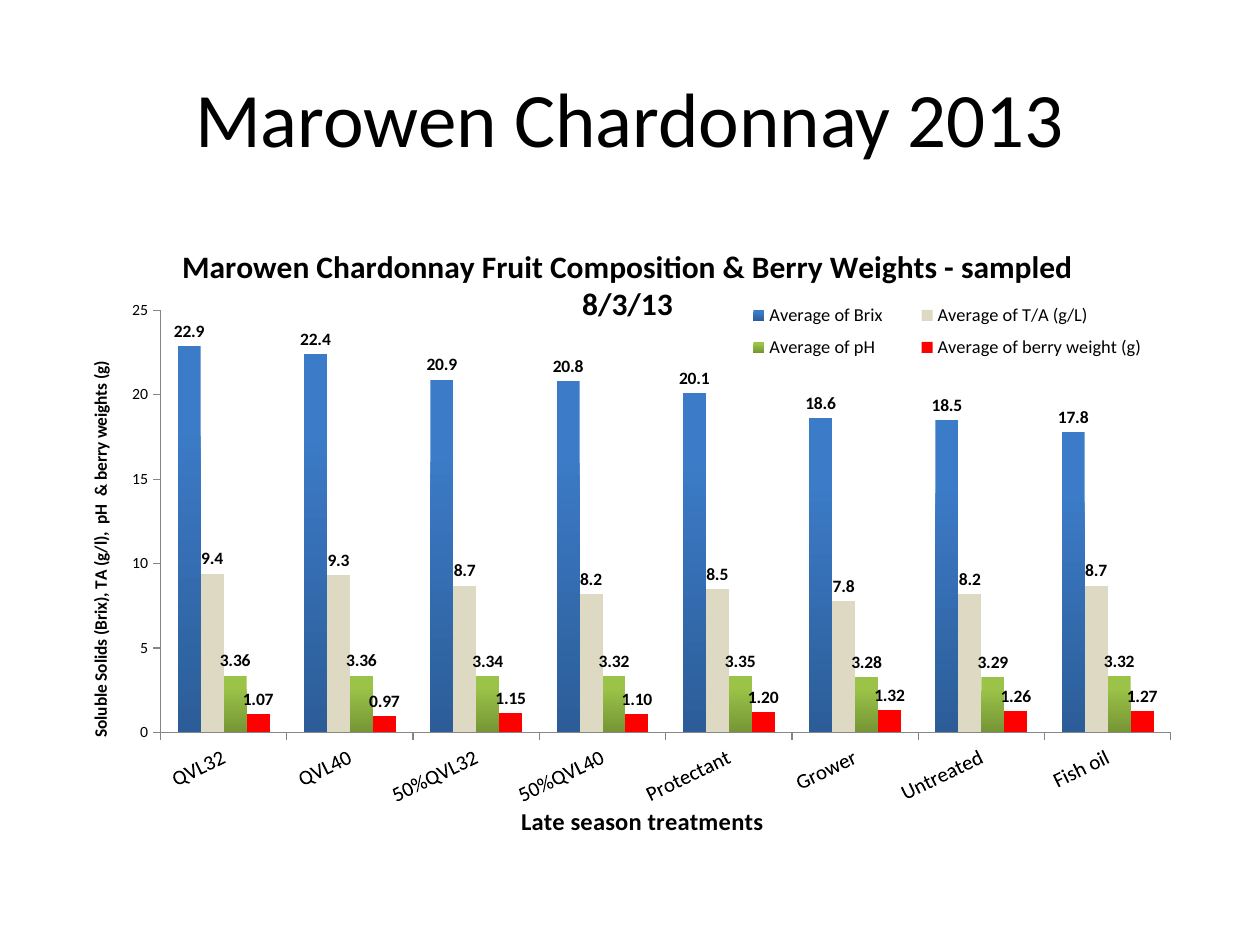
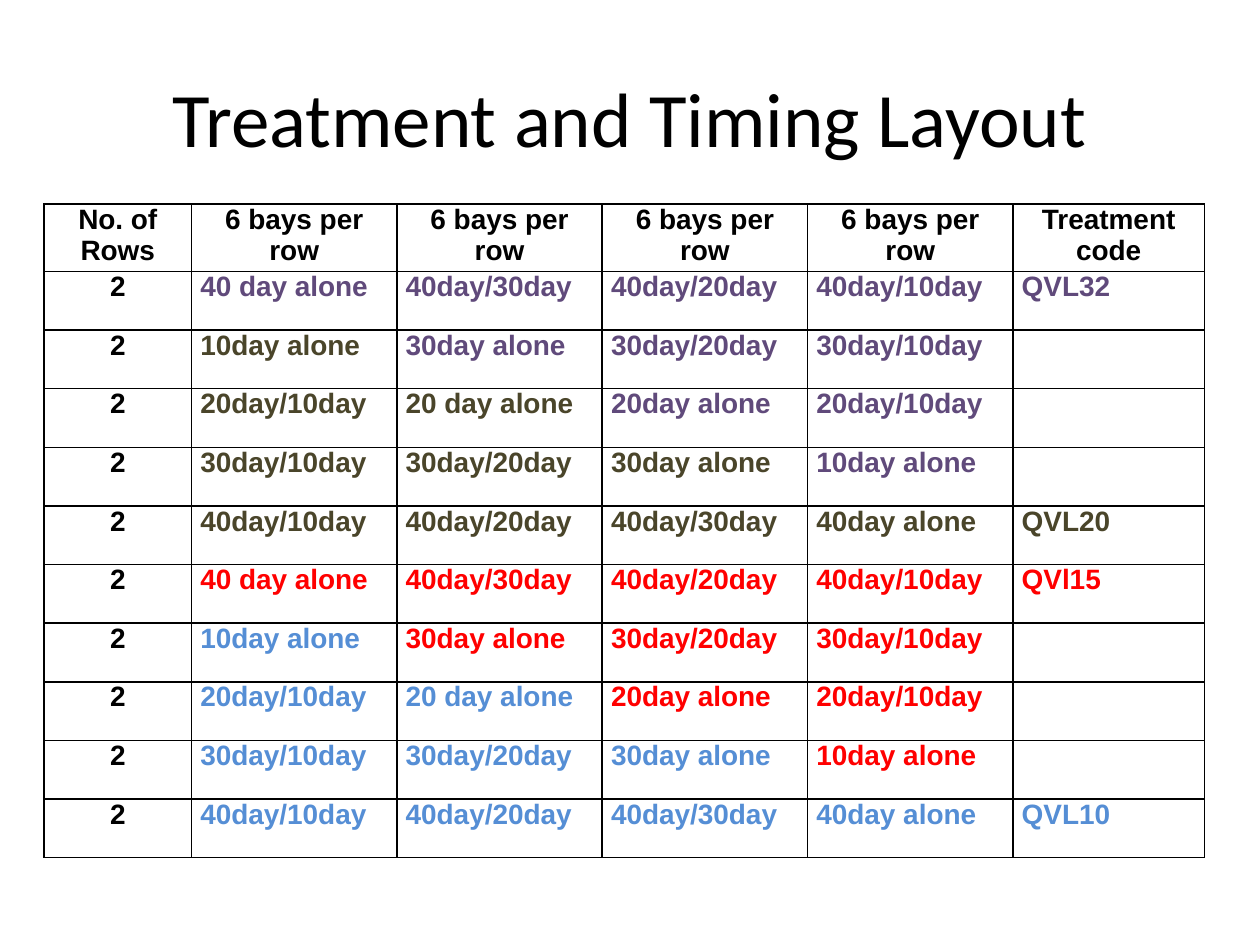
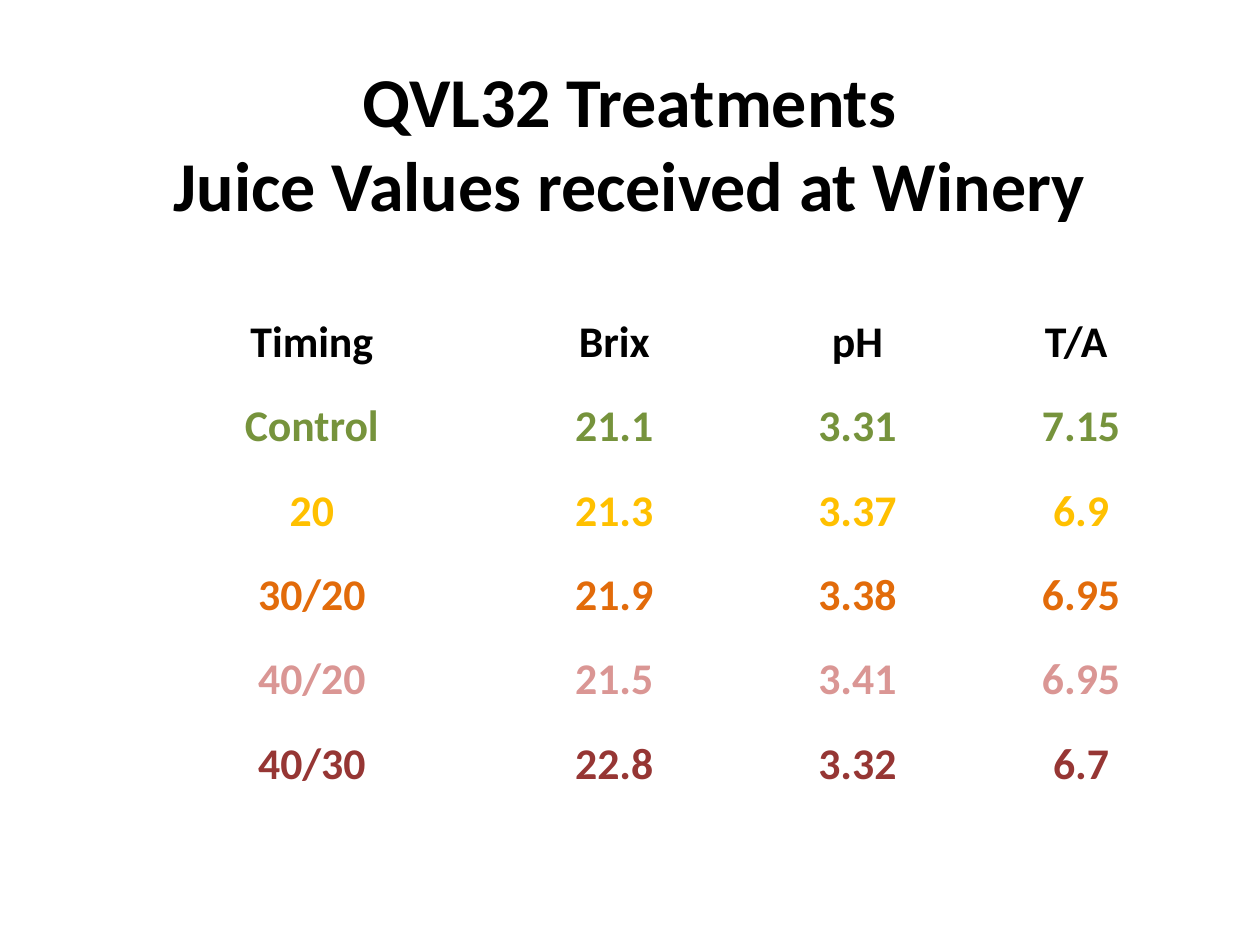
import lxml.etree
import pptx
import pptx.chart.data
import pptx.dml.color
import pptx.enum.chart
import pptx.enum.text
import pptx.oxml.ns
import pptx.util

PX = 9144  # 100 px to the inch
BLACK = "000000"
AXIS_GREY = "868686"
PURPLE, OLIVE, RED, BLUE = "604A7B", "4A452A", "FF0000", "558ED5"
CENTER = pptx.enum.text.PP_ALIGN.CENTER
LEFT = pptx.enum.text.PP_ALIGN.LEFT
qn = pptx.oxml.ns.qn

TREATMENTS = ["QVL32", "QVL40", "50%QVL32", "50%QVL40",
              "Protectant", "Grower", "Untreated", "Fish oil"]
# name, values, label format, colours from top to bottom
SERIES = [
    ("Average of Brix", [22.9, 22.4, 20.9, 20.8, 20.1, 18.6, 18.5, 17.8],
     "#,##0.0", ["3C7BC7", "2C5D98"]),
    ("Average of T/A (g/L)", [9.4, 9.3, 8.7, 8.2, 8.5, 7.8, 8.2, 8.7],
     "#,##0.0", ["DDD9C3"]),
    ("Average of pH", [3.36, 3.36, 3.34, 3.32, 3.35, 3.28, 3.29, 3.32],
     "#,##0.00", ["9BC348", "769535"]),
    ("Average of berry weight (g)", [1.07, 0.97, 1.15, 1.10, 1.20, 1.32, 1.26, 1.27],
     "#,##0.00", [RED]),
]

TIMING_HEADER = ["No. of Rows"] + ["6 bays per row"] * 4 + ["Treatment code"]
TIMINGS = [
    ["40 day alone", "40day/30day", "40day/20day", "40day/10day"],
    ["10day alone", "30day alone", "30day/20day", "30day/10day"],
    ["20day/10day", "20 day alone", "20day alone", "20day/10day"],
    ["30day/10day", "30day/20day", "30day alone", "10day alone"],
    ["40day/10day", "40day/20day", "40day/30day", "40day alone"],
]
# codes and colours of the first and the last treatment in each block
TIMING_BLOCKS = [("QVL32", PURPLE, "QVL20", OLIVE), ("QVl15", RED, "QVL10", BLUE)]

JUICE_ROWS = [
    (BLACK, ["Timing", "Brix", "pH", "T/A "]),
    ("76933C", ["Control", "21.1", "3.31", "7.15"]),
    ("FFC000", ["20", "21.3", "3.37", "6.9"]),
    ("E26B0A", ["30/20", "21.9", "3.38", "6.95"]),
    ("DA9694", ["40/20", "21.5", "3.41", "6.95"]),
    ("963634", ["40/30", "22.8", "3.32", "6.7"]),
]


def px(*lengths):
    return [int(n * PX) for n in lengths]


def rgb(color):
    return pptx.dml.color.RGBColor.from_string(color)


def style_font(font, size, bold=False, color=BLACK, name="Calibri"):
    font.size = pptx.util.Pt(size)
    font.bold = bold
    font.name = name
    font.color.rgb = rgb(color)


def add_title(slide, box, text, size=44, bold=False):
    tf = slide.shapes.add_textbox(*px(*box)).text_frame
    tf.word_wrap = True
    tf.vertical_anchor = pptx.enum.text.MSO_ANCHOR.MIDDLE
    p = tf.paragraphs[0]
    p.text = text
    p.alignment = CENTER
    for r in p.runs:
        style_font(r.font, size, bold)


# Chart parts

def set_layout(element, index, inner=False, **place):
    """Place a chart part by fractions of the chart area."""
    old = element.find(qn("c:layout"))
    if old is not None:
        element.remove(old)
    layout = lxml.etree.Element(qn("c:layout"))
    manual = lxml.etree.SubElement(layout, qn("c:manualLayout"))
    values = {"layoutTarget": "inner"} if inner else {}
    values.update(xMode="edge", yMode="edge", **place)
    for tag, value in values.items():
        lxml.etree.SubElement(manual, qn("c:" + tag)).set("val", str(value))
    element.insert(index, layout)


def set_chart_title(title, text, size, x, y, rotation=0):
    tf = title.text_frame
    tf.text = text
    style_font(tf.paragraphs[0].runs[0].font, size, True)
    tf._txBody.find(qn("a:bodyPr")).set("rot", str(rotation * 60000))
    set_layout(title._element, 1, x=x, y=y)


def style_axis(axis, size):
    axis.has_major_gridlines = False
    axis.major_tick_mark = pptx.enum.chart.XL_TICK_MARK.OUTSIDE
    axis.format.line.color.rgb = rgb(AXIS_GREY)
    style_font(axis.tick_labels.font, size)


def style_series(series, label_format, colors):
    fill = series.format.fill
    if len(colors) == 1:
        fill.solid()
        fill.fore_color.rgb = rgb(colors[0])
    else:
        fill.gradient()
        fill.gradient_angle = 270
        for stop, color in zip(fill.gradient_stops, colors):
            stop.color.rgb = rgb(color)
        fill.gradient_stops[0].position = 0.2
    series.invert_if_negative = False
    labels = series.data_labels
    labels.show_value = True
    labels.number_format = label_format
    labels.number_format_is_linked = False
    labels.position = pptx.enum.chart.XL_LABEL_POSITION.OUTSIDE_END
    style_font(labels.font, 10, True)


def add_fruit_chart(slide, box):
    data = pptx.chart.data.CategoryChartData()
    data.categories = TREATMENTS
    for name, values, _, _ in SERIES:
        data.add_series(name, values)
    chart = slide.shapes.add_chart(
        pptx.enum.chart.XL_CHART_TYPE.COLUMN_CLUSTERED, *px(*box), data).chart
    style_font(chart.font, 10)
    set_chart_title(
        chart.chart_title,
        "Marowen Chardonnay Fruit Composition & Berry Weights - sampled 8/3/13",
        18, 0.1, 0.03)

    # Bars
    plot = chart.plots[0]
    plot.gap_width = 150
    plot.overlap = 0
    plot.vary_by_categories = False
    for series, (_, _, label_format, colors) in zip(plot.series, SERIES):
        style_series(series, label_format, colors)
    set_layout(chart._chartSpace.chart.plotArea, 0, True, x=0.086, y=0.146, w=0.891, h=0.685)

    # Axes
    cat_axis, val_axis = chart.category_axis, chart.value_axis
    style_axis(cat_axis, 12)
    labels_body = cat_axis._element.find(qn("c:txPr")).find(qn("a:bodyPr"))
    labels_body.set("rot", str(-26 * 60000))
    set_chart_title(cat_axis.axis_title, "Late season treatments", 14, 0.4, 0.94)
    style_axis(val_axis, 9)
    val_axis.minimum_scale, val_axis.maximum_scale, val_axis.major_unit = 0, 25, 5
    val_axis.tick_labels.number_format = "0"
    val_axis.tick_labels.number_format_is_linked = False
    set_chart_title(val_axis.axis_title,
                    "Soluble Solids (Brix), TA (g/l),  pH  & berry weights (g)",
                    10, 0.02, 0.23, -90)

    # Legend
    chart.has_legend = True
    legend = chart.legend
    legend.position = pptx.enum.chart.XL_LEGEND_POSITION.RIGHT
    legend.include_in_layout = False
    style_font(legend.font, 10.5)
    set_layout(legend._element, 1, x=0.58, y=0.12, w=0.4, h=0.12)


# Table parts

def add_plain_table(slide, left, top, widths, heights):
    table = slide.shapes.add_table(
        len(heights), len(widths), *px(left, top, sum(widths), sum(heights))).table
    table.first_row = table.horz_banding = False
    for column, width in zip(table.columns, widths):
        column.width = int(width * PX)
    for row, height in zip(table.rows, heights):
        row.height = int(height * PX)
    return table


def set_border(cell):
    tcPr = cell._tc.get_or_add_tcPr()
    for side in ("a:lnL", "a:lnR", "a:lnT", "a:lnB"):
        ln = lxml.etree.SubElement(tcPr, qn(side), w=str(pptx.util.Pt(1)))
        fill = lxml.etree.SubElement(ln, qn("a:solidFill"))
        lxml.etree.SubElement(fill, qn("a:srgbClr"), val=BLACK)


def fill_cell(cell, text, size, color=BLACK, font="Calibri", align=CENTER):
    cell.fill.background()
    cell.margin_left = cell.margin_right = 7 * PX
    cell.margin_top = cell.margin_bottom = 0
    p = cell.text_frame.paragraphs[0]
    p.alignment = align
    if text:
        p.text = text
        style_font(p.runs[0].font, size, True, color, font)


def add_timing_table(slide, left, top, height):
    rows = [[(text, BLACK) for text in TIMING_HEADER]]
    for first_code, first_color, last_code, last_color in TIMING_BLOCKS:
        codes = [first_code, "", "", "", last_code]
        for i, (timings, code) in enumerate(zip(TIMINGS, codes)):
            # the last colour takes one more column in each row
            colored = [(text, last_color if min(j, 3) < i else first_color)
                       for j, text in enumerate(timings + [code])]
            rows.append([("2", BLACK)] + colored)

    widths = [117] + [163] * 4 + [152]
    table = add_plain_table(slide, left, top, widths, [height / len(rows)] * len(rows))
    for i, row in enumerate(rows):
        for j, (text, color) in enumerate(row):
            cell = table.cell(i, j)
            set_border(cell)
            fill_cell(cell, text, 16, color, "Arial", CENTER if i == 0 or j == 0 else LEFT)


def add_juice_table(slide, left, top):
    rows = [(BLACK, [""] * 4)] + JUICE_ROWS
    table = add_plain_table(slide, left, top, [299, 181, 205, 150], [42, 49] + [67] * 5)
    for i, (color, texts) in enumerate(rows):
        for j, text in enumerate(texts):
            cell = table.cell(i, j)
            fill_cell(cell, text, 25, color)
            cell.vertical_anchor = pptx.enum.text.MSO_ANCHOR.BOTTOM
            cell.text_frame.paragraphs[0].line_spacing = 1.15


def main():
    prs = pptx.Presentation()
    prs.slide_width, prs.slide_height = px(1000, 750)
    chart_slide, timing_slide, juice_slide = [
        prs.slides.add_slide(prs.slide_layouts[6]) for _ in range(3)]
    title_box = (50, 30, 900, 125)

    add_title(chart_slide, title_box, "Marowen Chardonnay 2013")
    add_fruit_chart(chart_slide, (50, 175, 900, 495))

    add_title(timing_slide, title_box, "Treatment and Timing Layout")
    add_timing_table(timing_slide, 35, 162, 512)

    add_title(juice_slide, (50, 30, 899, 164),
              "QVL32 Treatments\nJuice Values received at Winery", 40, True)
    add_juice_table(juice_slide, 98, 202)
    prs.save("out.pptx")


if __name__ == "__main__":
    main()
